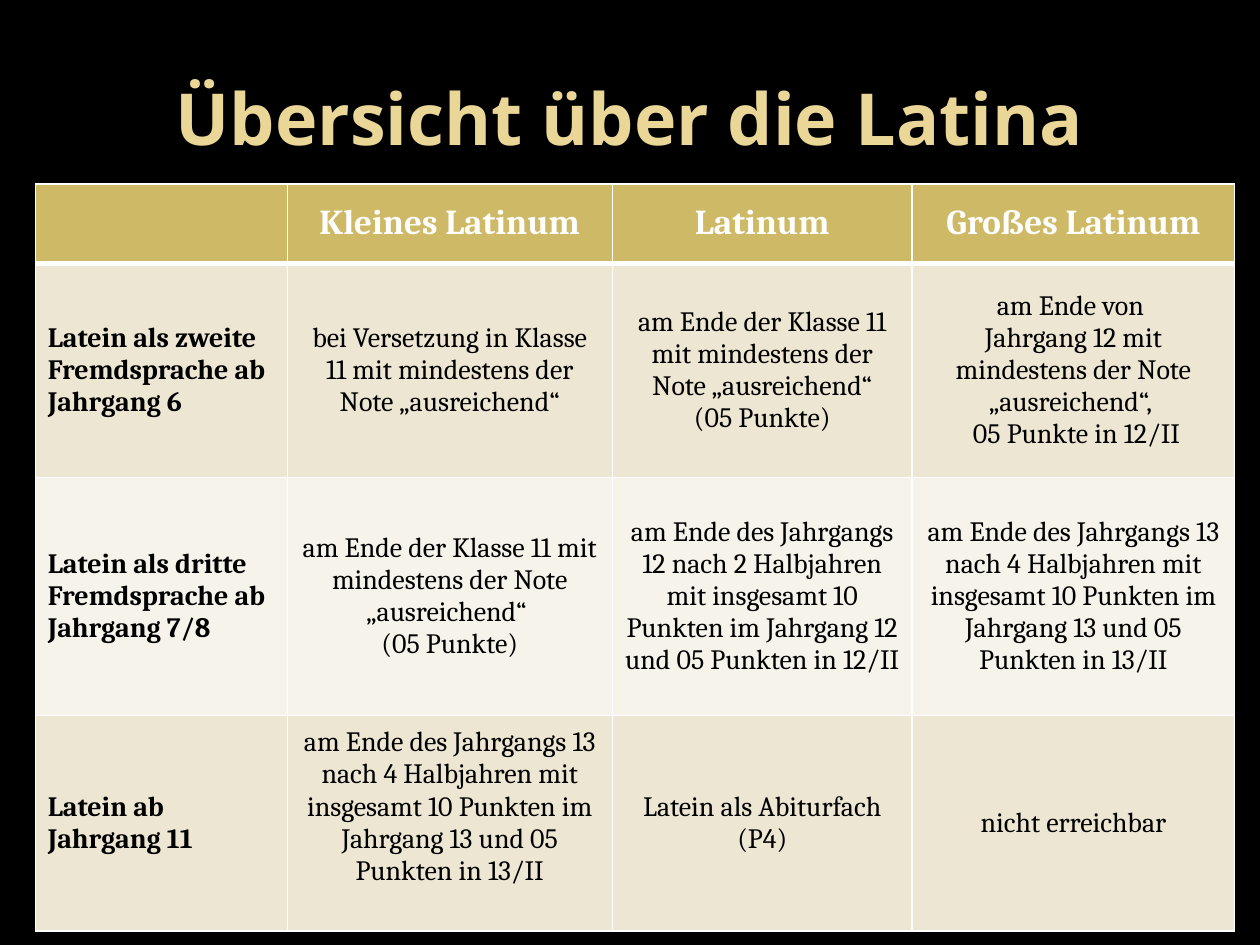
from dataclasses import dataclass

from lxml.etree import SubElement
from pptx import Presentation
from pptx.dml.color import RGBColor
from pptx.enum.text import MSO_ANCHOR, MSO_AUTO_SIZE, PP_ALIGN
from pptx.oxml.ns import qn
from pptx.slide import Slide
from pptx.table import Table, _Cell
from pptx.util import Inches, Pt

BLACK = RGBColor(0x00, 0x00, 0x00)
WHITE = RGBColor(0xFF, 0xFF, 0xFF)
GOLD = RGBColor(0xCE, 0xB9, 0x66)
PALE = RGBColor(0xEA, 0xD6, 0x96)
SAND = RGBColor(0xED, 0xE6, 0xD3)
CREAM = RGBColor(0xF6, 0xF3, 0xEA)

WIDTHS = (2, 2.58, 2.38, 2.56)
FULL = (
    "am Ende des Jahrgangs 13 nach 4 Halbjahren mit insgesamt 10 Punkten "
    "im Jahrgang 13 und 05 Punkten in 13/II"
)


@dataclass(frozen=True)
class Row:
    height: float
    fill: RGBColor
    texts: tuple[str, ...]
    size: int = 16
    color: RGBColor = BLACK
    head: bool = False


ROWS = (
    Row(0.63, GOLD, ("", "Kleines Latinum", "Latinum", "Großes Latinum"), 20, WHITE, True),
    Row(1.7, SAND, (
        "Latein als zweite Fremdsprache ab Jahrgang 6",
        "bei Versetzung in Klasse 11 mit mindestens der Note „ausreichend“",
        "am Ende der Klasse 11 mit mindestens der Note „ausreichend“\v(05 Punkte)",
        "am Ende von \nJahrgang 12 mit mindestens der Note „ausreichend“, \v 05 Punkte in 12/II",
    )),
    Row(1.89, CREAM, (
        "Latein als dritte Fremdsprache ab Jahrgang 7/8",
        "am Ende der Klasse 11 mit mindestens der Note „ausreichend“ \v(05 Punkte)",
        "am Ende des Jahrgangs 12 nach 2 Halbjahren mit insgesamt 10 Punkten "
        "im Jahrgang 12 und 05 Punkten in 12/II",
        FULL,
    )),
    Row(1.71, SAND, ("Latein ab Jahrgang 11", FULL, "Latein als Abiturfach (P4)", "nicht erreichbar")),
)


def add_lines(cell: _Cell, top: float, base: float) -> None:
    props = cell._tc.get_or_add_tcPr()
    sides = (("lnL", 1), ("lnR", 1), ("lnT", top), ("lnB", base))
    for place, (side, width) in enumerate(sides):
        line = SubElement(props, qn(f"a:{side}"), w=str(Pt(width)))
        fill = SubElement(line, qn("a:solidFill"))
        SubElement(fill, qn("a:srgbClr"), val=str(WHITE))
        props.insert(place, line)


def fill_cell(cell: _Cell, row: Row, text: str, first: bool) -> None:
    cell.fill.solid()
    cell.fill.fore_color.rgb = row.fill
    cell.vertical_anchor = MSO_ANCHOR.MIDDLE
    cell.text_frame.text = text
    for para in cell.text_frame.paragraphs:
        para.alignment = PP_ALIGN.LEFT if first else PP_ALIGN.CENTER
        for run in para.runs:
            run.font.name = "Cambria"
            run.font.size = Pt(row.size)
            run.font.bold = row.head or first
            run.font.color.rgb = row.color


def add_grid(slide: Slide) -> Table:
    height = sum(row.height for row in ROWS)
    frame = slide.shapes.add_table(
        len(ROWS), len(WIDTHS), Inches(0.28), Inches(1.46),
        Inches(sum(WIDTHS)), Inches(height),
    )
    table = frame.table
    for column, width in zip(table.columns, WIDTHS):
        column.width = Inches(width)
    for r, row in enumerate(ROWS):
        table.rows[r].height = Inches(row.height)
        for c, text in enumerate(row.texts):
            cell = table.cell(r, c)
            fill_cell(cell, row, text, c == 0)
            add_lines(cell, 3 if r == 1 else 1, 3 if row.head else 1)
    return table


def add_title(slide: Slide) -> None:
    title = slide.shapes.title
    title.left, title.top = Inches(0.5), Inches(0.3)
    title.width, title.height = Inches(9), Inches(1.25)
    frame = title.text_frame
    frame.text = "Übersicht über die Latina"
    frame.auto_size = MSO_AUTO_SIZE.NONE
    frame.vertical_anchor = MSO_ANCHOR.MIDDLE
    para = frame.paragraphs[0]
    para.alignment = PP_ALIGN.CENTER
    font = para.runs[0].font
    font.name = "Noto Sans"
    font.size = Pt(41)
    font.bold = True
    font.color.rgb = PALE


def main() -> None:
    deck = Presentation()
    deck.slide_width, deck.slide_height = Inches(10), Inches(7.5)
    slide = deck.slides.add_slide(deck.slide_layouts[5])
    slide.background.fill.solid()
    slide.background.fill.fore_color.rgb = BLACK
    add_title(slide)
    table = add_grid(slide)
    table.cell(3, 1).margin_bottom = Inches(0.31)
    deck.save("out.pptx")


if __name__ == "__main__":
    main()
